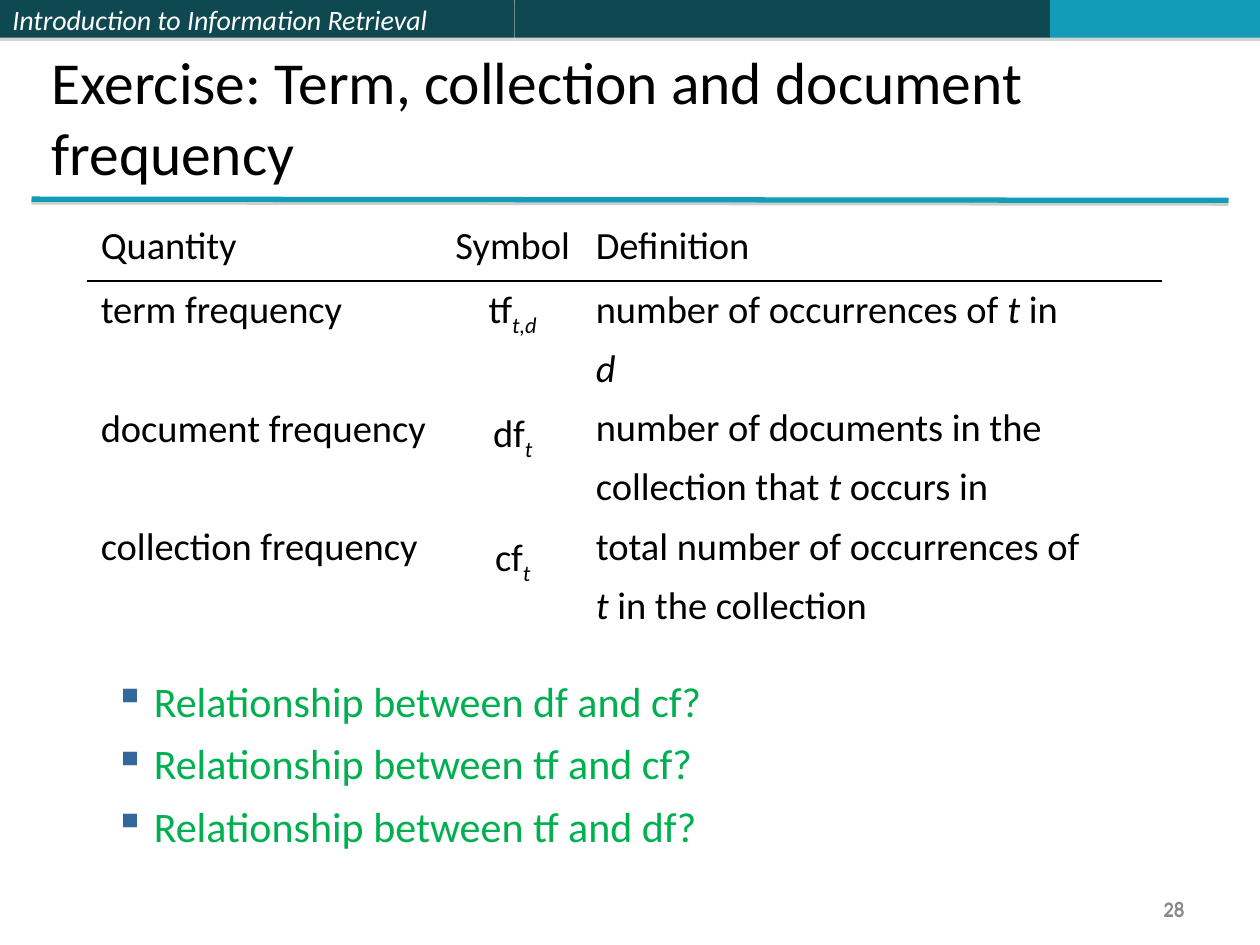
"""Build the term, collection and document frequency exercise slide."""
from lxml.etree import SubElement
from pptx import Presentation
from pptx.dml.color import RGBColor
from pptx.enum.shapes import MSO_CONNECTOR, MSO_SHAPE
from pptx.enum.text import MSO_ANCHOR, PP_ALIGN
from pptx.oxml import parse_xml
from pptx.oxml.ns import nsdecls, qn
from pptx.util import Pt

COLORS = {
    "black": "000000", "white": "FFFFFF", "dark teal": "0E4851", "teal": "139CB7",
    "gray": "898989", "green": "00B050", "bullet": "336699", "shadow": "808080",
}


def add_shadow(shape, distance, opacity):
    """Give a shape a hard shadow that falls straight down."""
    shape._element.spPr.append(parse_xml(
        f'<a:effectLst {nsdecls("a")}><a:outerShdw dist="{Pt(distance)}" dir="5400000" '
        f'rotWithShape="0"><a:srgbClr val="{COLORS["shadow"]}">'
        f'<a:alpha val="{opacity * 1000}"/></a:srgbClr></a:outerShdw></a:effectLst>'))


def write(para, spans, size, color, **formats):
    """Write (text, style) spans into a paragraph and set its formats."""
    for name, value in formats.items():
        setattr(para, name, value)
    for text, style in spans:
        span = para.add_run()
        span.text = text
        font_formats = {"name": "Calibri", "size": Pt(size), "italic": style != "plain"}
        for name, value in font_formats.items():
            setattr(span.font, name, value)
        span.font.color.rgb = RGBColor.from_string(COLORS[color])
        if style == "subscript":
            span._r.get_or_add_rPr().set("baseline", "-25000")


deck = Presentation()
deck.slide_width, deck.slide_height = Pt(720), Pt(540)
page = deck.slides.add_slide(deck.slide_layouts[6])

bars = []
for left, width, color in [(0, 294, "dark teal"), (294, 306, "dark teal"), (600, 120, "teal")]:
    bar = page.shapes.add_shape(MSO_SHAPE.RECTANGLE, Pt(left), Pt(0), Pt(width), Pt(21.6))
    bar.fill.solid()
    bar.fill.fore_color.rgb = RGBColor.from_string(COLORS[color])
    bar.line.fill.background()
    add_shadow(bar, 1.8, 35)
    bars.append(bar)
banner = bars[0].text_frame
banner.word_wrap = True
banner.vertical_anchor = MSO_ANCHOR.MIDDLE
write(banner.paragraphs[0], [("Introduction to Information Retrieval", "italic")],
      16, "white", alignment=PP_ALIGN.LEFT)

rule = page.shapes.add_connector(MSO_CONNECTOR.STRAIGHT, Pt(18), Pt(113.8), Pt(702), Pt(114.5))
rule.line.color.rgb = RGBColor.from_string(COLORS["teal"])
rule.line.width = Pt(3)
add_shadow(rule, 1.6, 38)

questions = [f"Relationship between {pair}?" for pair in ("df and cf", "tf and cf", "tf and df")]
text_boxes = [
    ((516, 509.8, 168, 19.4), MSO_ANCHOR.MIDDLE, ["28"], 12, "gray", PP_ALIGN.RIGHT),
    ((22.3, 0.7, 697.7, 110.2), MSO_ANCHOR.BOTTOM,
     ["Exercise: Term, collection and document frequency"], 34, "black", PP_ALIGN.LEFT),
    ((22.3, 382.3, 652.3, 191.5), MSO_ANCHOR.TOP, questions, 24, "green", PP_ALIGN.LEFT),
    ((516, 508.3, 168, 21.6), MSO_ANCHOR.MIDDLE, ["28"], 12, "gray", PP_ALIGN.RIGHT),
]
for place, anchor, lines, size, color, alignment in text_boxes:
    box = page.shapes.add_textbox(*map(Pt, place))
    frame = box.text_frame
    frame.word_wrap = True
    frame.vertical_anchor = anchor
    for index, line in enumerate(lines):
        para = frame.paragraphs[0] if index == 0 else frame.add_paragraph()
        write(para, [(line, "plain")], size, color, alignment=alignment)
        if lines is questions:
            para.level = 1
            para.space_before = Pt(7)
            properties = para._p.get_or_add_pPr()
            properties.set("marL", str(Pt(58.5)))
            properties.set("indent", str(Pt(-22.5)))
            bullet_color = SubElement(properties, qn("a:buClr"))
            SubElement(bullet_color, qn("a:srgbClr"), val=COLORS["bullet"])
            SubElement(properties, qn("a:buChar"), char="▪")

header = [[[(title, "plain")]] for title in ("Quantity", "Symbol", "Definition")]
quantities = [[(f"{kind} frequency", "plain")] for kind in ("term", "document", "collection")]
symbols = [[(symbol, "plain"), (index, "subscript")]
           for symbol, index in (("tf", "t,d"), ("df", "t"), ("cf", "t"))]
definitions = [
    [("number of occurrences of ", "plain"), ("t", "italic"), (" in", "plain")],
    [("d", "italic")],
    [("number of documents in the", "plain")],
    [("collection that", "plain"), (" t ", "italic"), ("occurs in", "plain")],
    [("total number of occurrences of", "plain")],
    [("t", "italic"), (" in the collection", "plain")],
]
rows = [header, [quantities, symbols, definitions]]
borders = [{"lnT": "white", "lnB": "black"}, {"lnT": "black", "lnB": "white"}]

table = page.shapes.add_table(2, 3, Pt(50.4), Pt(123.8), Pt(613.4), Pt(241.9)).table
table.first_row = table.horz_banding = False
for column, width in zip(table.columns, (202.3, 80.6, 330.5)):
    column.width = Pt(width)
for row, height in zip(table.rows, (36.7, 205.2)):
    row.height = Pt(height)
for row_index, contents in enumerate(rows):
    for column_index, paragraphs in enumerate(contents):
        cell = table.cell(row_index, column_index)
        properties = cell._tc.get_or_add_tcPr()
        for side, color in borders[row_index].items():
            edge = SubElement(properties, qn(f"a:{side}"), w=str(Pt(1)))
            fill = SubElement(edge, qn("a:solidFill"))
            SubElement(fill, qn("a:srgbClr"), val=COLORS[color])
        cell.fill.background()
        alignment = PP_ALIGN.CENTER if column_index == 1 else PP_ALIGN.LEFT
        for index, spans in enumerate(paragraphs):
            para = cell.text_frame.paragraphs[0] if index == 0 else cell.text_frame.add_paragraph()
            skips_line = index > 0 and len(paragraphs) == 3
            gap = 0 if row_index == 0 else 41 if skips_line else 7
            write(para, spans, 22, "black", alignment=alignment, space_before=Pt(gap))

deck.save("out.pptx")
